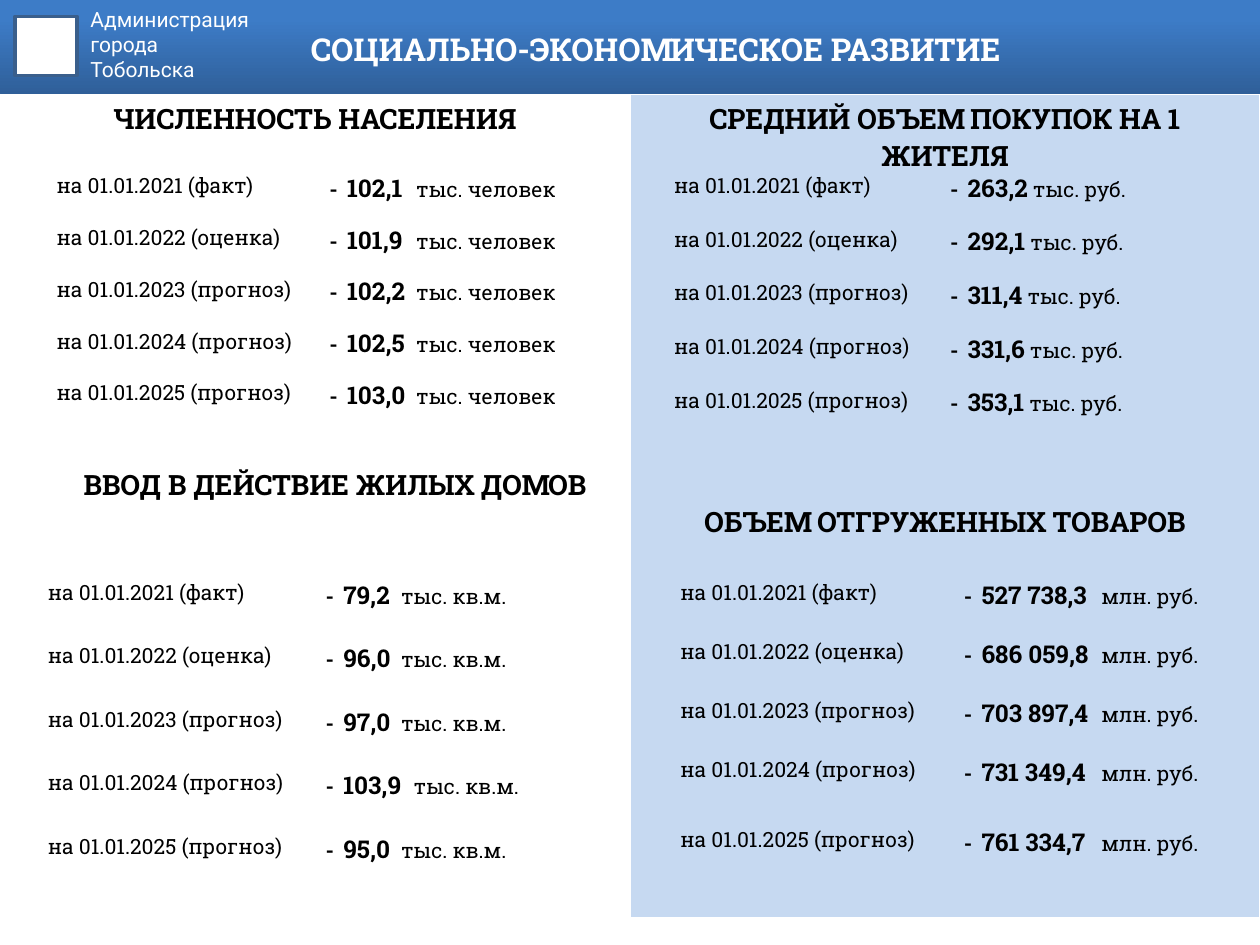
from lxml import etree
from pptx import Presentation
from pptx import util as u
from pptx.dml.color import RGBColor
from pptx.enum import shapes, text
from pptx.oxml import ns

UNIT = u.Inches(0.1)  # the slide is a grid of 100 columns and 75 rows
SLAB = "Roboto Slab"
NO_STYLE = "{2D5ABB26-0587-4C30-8999-92F81FD0307C}"
DATES = ["на 01.01.2021 (факт)", "на 01.01.2022 (оценка)",
         "на 01.01.2023 (прогноз)", "на 01.01.2024 (прогноз)",
         "на 01.01.2025 (прогноз)"]


def color(value):
    return RGBColor.from_string(value)


def grid(*lengths):
    return [u.Emu(round(length * UNIT)) for length in lengths]


def add_xml(parent, tag, **attributes):
    return etree.SubElement(parent, ns.qn(tag), attributes)


def set_font(font, size, name=SLAB, fill="000000", bold=False):
    font.size, font.name, font.bold = u.Pt(size), name, bold
    font.color.rgb = color(fill)


def add_text(slide, box, lines, size, name, bold=False, align=None, anchor=None):
    frame = slide.shapes.add_textbox(*grid(*box)).text_frame
    frame.word_wrap = True
    frame.vertical_anchor = anchor
    frame.text = "\n".join(lines)
    for paragraph in frame.paragraphs:
        paragraph.alignment = align
        set_font(paragraph.font, size, name, "FFFFFF", bold)


def add_plain_table(slide, box, rows, columns):
    frame = slide.shapes.add_table(rows, columns, *grid(*box))
    table = frame.table
    table.first_row = table.horz_banding = False
    table._tbl.tblPr.find(ns.qn("a:tableStyleId")).text = NO_STYLE
    return table


def add_header(slide, box):
    left, top, width, height = box
    # Gradient band with a soft shadow
    band = slide.shapes.add_shape(shapes.MSO_SHAPE.RECTANGLE, *grid(*box))
    band.fill.gradient()
    band.fill.gradient_angle = 90
    for stop, (position, value) in zip(band.fill.gradient_stops,
                                       [(0, "2F5F99"), (0.8, "3D7CC7")]):
        stop.position, stop.color.rgb = position, color(value)
    band.line.fill.background()
    band.shadow.inherit = False
    effects = band._element.spPr.find(ns.qn("a:effectLst"))
    shadow = add_xml(effects, "a:outerShdw", blurRad="40000", dist="23000",
                     dir="5400000", rotWithShape="0")
    add_xml(add_xml(shadow, "a:srgbClr", val="000000"), "a:alpha", val="35000")

    # Emblem square
    emblem = slide.shapes.add_shape(
        shapes.MSO_SHAPE.RECTANGLE, *grid(left + 1.2, top + 1.3, 4.9, 4.7))
    emblem.shadow.inherit = False
    emblem.fill.solid()
    emblem.fill.fore_color.rgb = color("FFFFFF")
    emblem.line.color.rgb = color("3A5F8C")
    emblem.line.width = u.Pt(2)

    # Office name and slide title
    add_text(slide, (left + 6.2, top, 23.4, 9.1),
             ["Администрация", "города", "Тобольска"], 12, "Roboto")
    add_text(slide, (left + 0.203 * width, top + 0.7, 0.635 * width, height - 1.2),
             ["СОЦИАЛЬНО-ЭКОНОМИЧЕСКОЕ РАЗВИТИЕ"], 18, SLAB, True,
             text.PP_ALIGN.CENTER, text.MSO_ANCHOR.MIDDLE)


def add_panels(slide, box, panels):
    """Two side-by-side panels, each with an upper and a lower heading."""
    table = add_plain_table(slide, box, 1, len(panels))
    for cell, (fill, headings, indent) in zip(table.rows[0].cells, panels):
        properties = cell._tc.get_or_add_tcPr()
        for side, points in zip("LRTB", (1, 1, 1, 3)):
            line = add_xml(properties, f"a:ln{side}", w=str(u.Pt(points)))
            add_xml(add_xml(line, "a:solidFill"), "a:srgbClr", val="FFFFFF")
        cell.fill.solid()
        cell.fill.fore_color.rgb = color(fill)
        cell.text_frame.text = "\n".join(headings)
        for paragraph in cell.text_frame.paragraphs:
            paragraph.alignment = text.PP_ALIGN.CENTER
            set_font(paragraph.font, 16, bold=True)
        lower = cell.text_frame.paragraphs[-1]
        lower.space_before = u.Pt(188)
        lower._p.get_or_add_pPr().set("marL", str(grid(indent)[0]))


def add_figures(slide, box, values, unit, stops, gap="\t", heights=None):
    """Dates on the left; dash, value and unit set on tab stops on the right."""
    table = add_plain_table(slide, box, len(DATES), 2)
    if heights:
        for row, height in zip(table.rows, heights):
            row.height = grid(height)[0]
    for row, date, value in zip(table.rows, DATES, values):
        date_cell, value_cell = row.cells
        for cell in row.cells:
            cell.fill.background()
        date_cell.text_frame.text = date
        set_font(date_cell.text_frame.paragraphs[0].font, 12)

        paragraph = value_cell.text_frame.paragraphs[0]
        tabs = add_xml(paragraph._p.get_or_add_pPr(), "a:tabLst")
        for stop in [1.4, *stops]:
            add_xml(tabs, "a:tab", pos=str(grid(stop)[0]), algn="l")
        for words, size, bold in [("-\t", 12, True), (value, 14, True),
                                  (gap + unit, 12, False)]:
            run = paragraph.add_run()
            run.text = words
            set_font(run.font, size, bold=bold)


def main():
    presentation = Presentation()
    presentation.slide_width, presentation.slide_height = grid(100, 75)
    slide = presentation.slides.add_slide(presentation.slide_layouts[6])

    add_header(slide, (0, 0, 100, 7.5))
    add_panels(slide, (0, 7.5, 100, 65.5), [
        ("FFFFFF", ["ЧИСЛЕННОСТЬ НАСЕЛЕНИЯ", "ВВОД В ДЕЙСТВИЕ ЖИЛЫХ ДОМОВ"], 3.2),
        ("C6D9F1", ["СРЕДНИЙ ОБЪЕМ ПОКУПОК НА 1 ЖИТЕЛЯ",
                    "ОБЪЕМ ОТГРУЖЕННЫХ ТОВАРОВ"], 0),
    ])

    # Population and housing
    add_figures(slide, (3.5, 13.1, 43.3, 20.6),
                ["102,1", "101,9", "102,2", "102,5", "103,0"],
                "тыс. человек", [6.9])
    add_figures(slide, (2.8, 45.4, 44.1, 25.2),
                ["79,2", "96,0", "97,0", "103,9", "95,0"],
                "тыс. кв.м.", [6, 7])
    # Purchases and shipped goods
    add_figures(slide, (52.5, 13.1, 43.8, 21.3),
                ["263,2", "292,1", "311,4", "331,6", "353,1"],
                "тыс. руб.", [], gap=" ")
    add_figures(slide, (53, 45.4, 45, 24.4),
                ["527 738,3", "686 059,8", "703 897,4", "731 349,4", "761 334,7"],
                "млн. руб.", [10.9], heights=[4.7, 4.7, 4.7, 5.5, 4.7])

    presentation.save("out.pptx")


if __name__ == "__main__":
    main()
